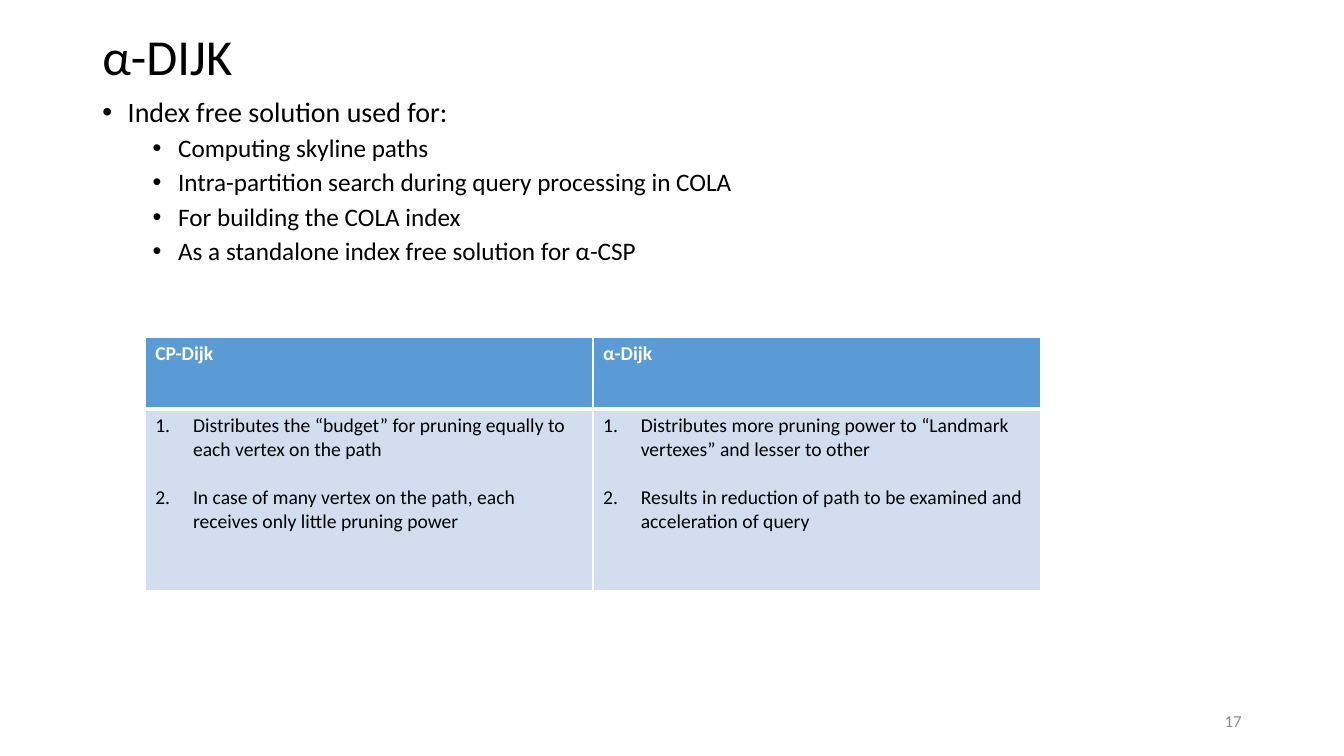
from lxml.etree import SubElement as Sub
from pptx import Presentation
from pptx.dml.color import RGBColor as Rgb
from pptx.enum.text import MSO_ANCHOR as Anchor, PP_ALIGN as Align
from pptx.oxml.ns import qn
from pptx.util import Cm, Pt

FONT = "Calibri"
COLORS = {"text": "000000", "muted": "8C8C8C", "white": "FFFFFF",
          "head": "5B9BD5", "body": "D2DEEF"}
USES = ["Computing skyline paths",
        "Intra-partition search during query processing in COLA",
        "For building the COLA index",
        "As a standalone index free solution for α-CSP"]
METHODS = {
    "CP-Dijk": [
        "Distributes the “budget” for pruning equally to each vertex on the path",
        "In case of many vertex on the path, each receives only little pruning power"],
    "α-Dijk": [
        "Distributes more pruning power to “Landmark vertexes” and lesser to other",
        "Results in reduction of path to be examined and acceleration of query"],
}


def write(para, text, size, color="text", bold=False, **form):
    """Fill a paragraph with one run; form holds paragraph attributes."""
    for name, value in form.items():
        setattr(para, name, value)
    run = para.add_run()
    run.text = text
    for name, value in {"name": FONT, "size": Pt(size), "bold": bold}.items():
        setattr(run.font, name, value)
    run.font.color.rgb = Rgb.from_string(COLORS[color])


def mark(para, left, hang, tag, **attrs):
    """Give a paragraph a hanging bullet or number."""
    props = para._p.get_or_add_pPr()
    props.set("marL", str(Cm(left)))
    props.set("indent", str(-Cm(hang)))
    Sub(props, qn("a:buFont"), typeface="Arial" if tag == "buChar" else FONT)
    Sub(props, qn("a:" + tag), **attrs)


def add_frame(slide, box, anchor):
    frame = slide.shapes.add_textbox(*map(Cm, box)).text_frame
    frame.word_wrap = True
    frame.vertical_anchor = anchor
    return frame


def add_title(slide, box):
    frame = add_frame(slide, box, Anchor.MIDDLE)
    write(frame.paragraphs[0], "α-DIJK", 36, line_spacing=0.9)


def add_uses(slide, box):
    frame = add_frame(slide, box, Anchor.TOP)
    first = frame.paragraphs[0]
    write(first, "Index free solution used for:", 20,
          line_spacing=0.9, space_before=Pt(10))
    mark(first, 0.64, 0.64, "buChar", char="•")
    for use in USES:
        para = frame.add_paragraph()
        write(para, use, 18, level=1, line_spacing=0.9, space_before=Pt(5))
        mark(para, 1.91, 0.64, "buChar", char="•")


def add_number(slide, box):
    frame = add_frame(slide, box, Anchor.MIDDLE)
    write(frame.paragraphs[0], "17", 12, "muted", alignment=Align.RIGHT)


def paint(cell, fill, base):
    """Set white borders, the lower one base points wide, then the fill."""
    props = cell._tc.get_or_add_tcPr()
    for side, width in {"L": 1, "R": 1, "T": 1, "B": base}.items():
        line = Sub(props, qn("a:ln" + side), w=str(Pt(width)))
        Sub(Sub(line, qn("a:solidFill")), qn("a:srgbClr"), val=COLORS["white"])
    cell.fill.solid()
    cell.fill.fore_color.rgb = Rgb.from_string(COLORS[fill])


def add_methods(slide, box, head=1.82):
    left, top, width, height = map(Cm, box)
    table = slide.shapes.add_table(2, len(METHODS), left, top, width, height).table
    table.rows[0].height = Cm(head)
    table.rows[1].height = height - Cm(head)
    for col, (name, points) in enumerate(METHODS.items()):
        title, body = table.cell(0, col), table.cell(1, col)
        paint(title, "head", 3)
        paint(body, "body", 1)
        write(title.text_frame.paragraphs[0], name, 14, "white", bold=True)
        frame = body.text_frame
        for row, point in enumerate(points):
            para = frame.add_paragraph() if row else frame.paragraphs[0]
            write(para, point, 14, space_before=Pt(17 * row))
            mark(para, 0.95, 0.95, "buAutoNum", type="arabicPeriod")
    # The lower cells share the thick rule under the heading row.
    for cell in table.rows[1].cells:
        cell._tc.tcPr.find(qn("a:lnT")).set("w", str(Pt(3)))


def main():
    deck = Presentation()
    deck.slide_width, deck.slide_height = Cm(33.87), Cm(19.05)
    slide = deck.slides.add_slide(deck.slide_layouts[6])
    add_title(slide, (2.33, 0.61, 29.21, 1.76))
    add_uses(slide, (2.33, 2.36, 29.21, 14.8))
    add_number(slide, (23.92, 17.65, 7.62, 1.01))
    add_methods(slide, (3.66, 8.49, 22.57, 6.38))
    deck.save("out.pptx")


if __name__ == "__main__":
    main()
